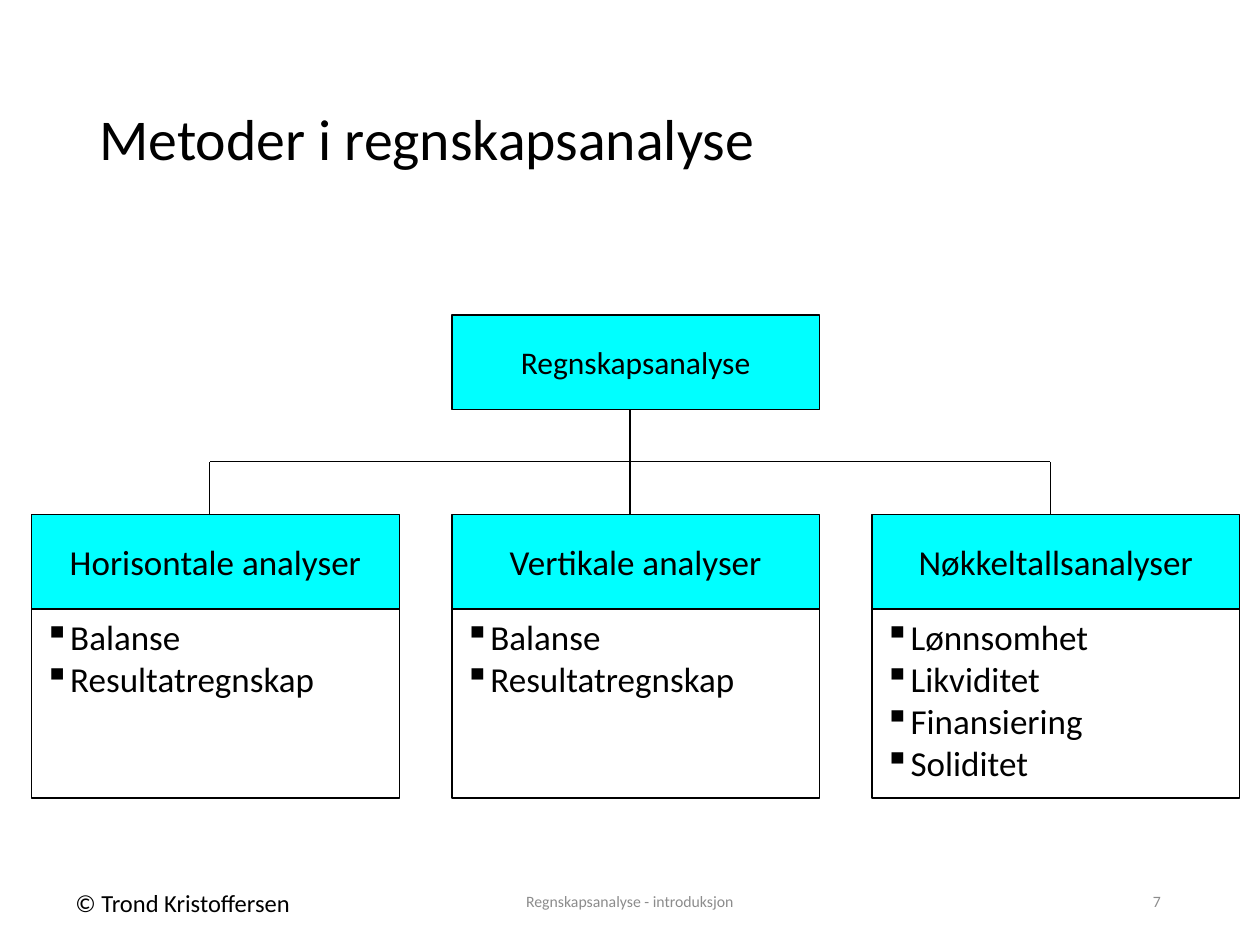
from lxml import etree
from pptx import Presentation
from pptx.dml.color import RGBColor
from pptx.enum import shapes, text
from pptx.oxml.ns import qn
from pptx.util import Cm, Pt

FONT = "Calibri"
BLACK, GREY, CYAN = "000000", "8C8C8C", "00FFFF"
LEFT, MIDDLE = text.PP_ALIGN.LEFT, text.MSO_ANCHOR.MIDDLE
CENTER, RIGHT = text.PP_ALIGN.CENTER, text.PP_ALIGN.RIGHT

BOX_WIDTH, HEADER_HEIGHT, LIST_HEIGHT = 7.41, 1.91, 3.81
FIRST_LEFT, COLUMN_STEP = 0.64, 8.47
ROOT_TOP, BUS_Y, HEADER_TOP = 6.35, 9.31, 10.37
TRUNK_X = 12.7

METHODS = [
    ("Horisontale analyser", ["Balanse", "Resultatregnskap"]),
    ("Vertikale analyser", ["Balanse", "Resultatregnskap"]),
    ("Nøkkeltallsanalyser",
     ["Lønnsomhet", "Likviditet", "Finansiering", "Soliditet"]),
]


def color(value):
    return RGBColor.from_string(value)


def add_bullet(para, indent=0.4):
    properties = para._p.get_or_add_pPr()
    properties.set("marL", str(Cm(indent)))
    properties.set("indent", str(-Cm(indent)))
    etree.SubElement(properties, qn("a:buChar"), char="▪")


def write(shape, lines, size=20, ink=BLACK, align=LEFT, anchor=MIDDLE,
          wrap=True, bullets=False, spacing=None):
    frame = shape.text_frame
    frame.word_wrap = wrap
    frame.vertical_anchor = anchor
    for number, line in enumerate(lines):
        para = frame.add_paragraph() if number else frame.paragraphs[0]
        para.alignment = align
        if spacing:
            para.line_spacing = spacing
        if bullets:
            add_bullet(para)
        span = para.add_run()
        span.text = line
        span.font.name = FONT
        span.font.size = Pt(size)
        span.font.color.rgb = color(ink)


def add_title(page, title):
    shape = page.shapes.title
    shape.left, shape.top = Cm(1.75), Cm(1.02)
    shape.width, shape.height = Cm(21.9), Cm(3.68)
    write(shape, [title], size=33, spacing=0.9)


def add_label(page, label, left, top, width, height, **style):
    box = page.shapes.add_textbox(Cm(left), Cm(top), Cm(width), Cm(height))
    write(box, [label], **style)


def add_box(page, lines, left, top, height, fill=None, **style):
    box = page.shapes.add_shape(shapes.MSO_SHAPE.RECTANGLE, Cm(left), Cm(top),
                                Cm(BOX_WIDTH), Cm(height))
    box.shadow.inherit = False
    if fill:
        box.fill.solid()
        box.fill.fore_color.rgb = color(fill)
    else:
        box.fill.background()
    box.line.color.rgb = color(BLACK)
    box.line.width = Pt(0.75)
    write(box, lines, **style)


def add_line(page, x1, y1, x2, y2):
    line = page.shapes.add_connector(shapes.MSO_CONNECTOR.STRAIGHT,
                                     Cm(x1), Cm(y1), Cm(x2), Cm(y2))
    line.line.color.rgb = color(BLACK)
    line.line.width = Pt(0.75)
    etree.SubElement(line._element.spPr, qn("a:effectLst"))


def add_method(page, column, name, topics):
    """Draw one branch: header, list of topics and lines to the trunk."""
    left = FIRST_LEFT + column * COLUMN_STEP
    branch_x = TRUNK_X + (column - 1) * COLUMN_STEP
    add_box(page, [name], left, HEADER_TOP, HEADER_HEIGHT, fill=CYAN,
            align=CENTER)
    add_box(page, topics, left, HEADER_TOP + HEADER_HEIGHT, LIST_HEIGHT,
            anchor=text.MSO_ANCHOR.TOP, bullets=True)
    if branch_x != TRUNK_X:
        add_line(page, TRUNK_X, BUS_Y, branch_x, BUS_Y)
    add_line(page, branch_x, BUS_Y, branch_x, HEADER_TOP)


def main():
    deck = Presentation()
    deck.slide_width, deck.slide_height = Cm(25.4), Cm(19.05)
    page = deck.slides.add_slide(deck.slide_layouts[5])

    add_title(page, "Metoder i regnskapsanalyse")
    add_box(page, ["Regnskapsanalyse"], FIRST_LEFT + COLUMN_STEP, ROOT_TOP,
            HEADER_HEIGHT, fill=CYAN, size=18, align=CENTER)
    add_line(page, TRUNK_X, ROOT_TOP + HEADER_HEIGHT, TRUNK_X, BUS_Y)
    for column, (name, topics) in enumerate(METHODS):
        add_method(page, column, name, topics)

    add_label(page, "© Trond Kristoffersen", 1.27, 17.78, 4.95, 0.85,
              size=14, anchor=text.MSO_ANCHOR.TOP, wrap=False)
    add_label(page, "Regnskapsanalyse - introduksjon", 8.41, 17.66, 8.57, 1.01,
              size=9, ink=GREY, align=CENTER)
    add_label(page, "7", 17.94, 17.66, 5.71, 1.01,
              size=9, ink=GREY, align=RIGHT)

    deck.save("out.pptx")


if __name__ == "__main__":
    main()
